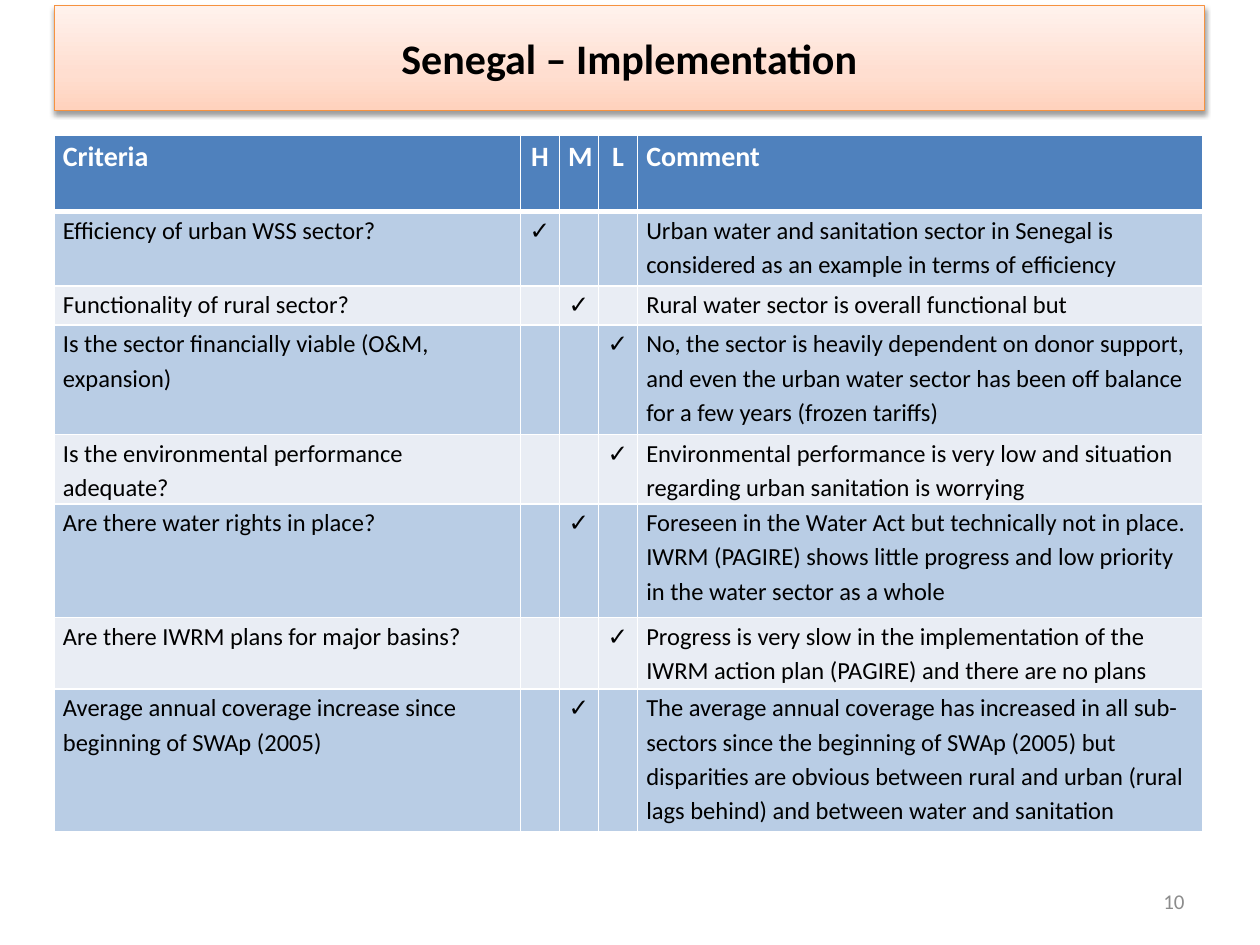
"""Build the Senegal implementation slide: a title bar and a rated criteria table."""
import copy

import pptx
import pptx.dml.color
import pptx.enum.text
import pptx.oxml
import pptx.util

Inches, Pt = pptx.util.Inches, pptx.util.Pt
ALIGN = pptx.enum.text.PP_ALIGN
MIDDLE = pptx.enum.text.MSO_ANCHOR.MIDDLE
NAMESPACE = 'xmlns:a="http://schemas.openxmlformats.org/drawingml/2006/main"'

TITLE = "Senegal – Implementation"
PAGE_NUMBER = "10"
RATINGS = ["H", "M", "L"]
HEADER = ["Criteria", *RATINGS, "Comment"]
CRITERIA = [
    ("Efficiency of urban WSS sector?", "H", 0.59,
     "Urban water and sanitation sector in Senegal is considered as an example in terms of efficiency"),
    ("Functionality of rural sector?", "M", 0.31,
     "Rural water sector is overall functional but"),
    ("Is the sector financially viable (O&M, expansion)", "L", 0.87,
     "No, the sector is heavily dependent on donor support, and even the urban water sector "
     "has been off balance for a few years (frozen tariffs)"),
    ("Is the environmental performance adequate?", "L", 0.55,
     "Environmental performance is very low and situation regarding urban sanitation is worrying"),
    ("Are there water rights in place?", "M", 0.9,
     "Foreseen in the Water Act but technically not in place. IWRM (PAGIRE) shows little "
     "progress and low priority in the water sector as a whole"),
    ("Are there IWRM plans for major basins?", "L", 0.57,
     "Progress is very slow in the implementation of the IWRM action plan (PAGIRE) and there are no plans"),
    ("Average annual coverage increase since beginning of SWAp (2005)", "M", 1.13,
     "The average annual coverage has increased in all sub-sectors since the beginning of SWAp (2005) "
     "but disparities are obvious between rural and urban (rural lags behind) "
     "and between water and sanitation"),
]
LEFT, WIDTH = 0.43, 9.13
COLUMN_WIDTHS = [3.7, 0.31, 0.31, 0.31, 4.49]
HEADER_HEIGHT = 0.61
HEADER_FILL, BAND_FILLS = "4F81BD", ["B9CDE5", "E9EDF4"]
TITLE_STOPS = [(0, "FFD2BD"), (0.35, "FFDED0"), (1, "FFF2ED")]


def colour(value):
    return pptx.dml.color.RGBColor.from_string(value)


def write(frame, text, size, value, bold=False, align=ALIGN.LEFT, spacing=None):
    para = frame.paragraphs[0]
    para.alignment, para.line_spacing = align, spacing
    para.font.size = Pt(size)
    if text:
        span = para.add_run()
        span.text = text
        span.font.name, span.font.size, span.font.bold = "Calibri", Pt(size), bold
        span.font.color.rgb = colour(value)
    else:
        para._p.get_or_add_endParaRPr().set("sz", str(size * 100))


def add_borders(cell, bottom):
    for side, width in zip("LRTB", (1, 1, 1, bottom)):
        cell._tc.get_or_add_tcPr().append(pptx.oxml.parse_xml(
            f'<a:ln{side} {NAMESPACE} w="{Pt(width)}"><a:solidFill>'
            f'<a:srgbClr val="FFFFFF"/></a:solidFill></a:ln{side}>'))


def add_title(page):
    box = page.shapes.title
    box.left, box.top, box.width, box.height = map(Inches, (LEFT, 0.21, WIDTH, 0.5))
    box.fill.gradient()
    box.fill.gradient_angle = 90
    stop_list = box._element.spPr.find(".//{*}gsLst")
    stop_list.insert(1, copy.deepcopy(stop_list[0]))
    for stop, (position, value) in zip(box.fill.gradient_stops, TITLE_STOPS):
        stop.position, stop.color.rgb = position, colour(value)
    box.line.color.rgb, box.line.width = colour("F69240"), Pt(0.75)
    box._element.spPr.append(pptx.oxml.parse_xml(
        f'<a:effectLst {NAMESPACE}><a:outerShdw blurRad="{Pt(3.1)}" dist="{Pt(1.6)}" '
        'dir="5400000" rotWithShape="0"><a:srgbClr val="000000"><a:alpha val="38000"/>'
        '</a:srgbClr></a:outerShdw></a:effectLst>'))
    frame = box.text_frame
    frame.auto_size = pptx.enum.text.MSO_AUTO_SIZE.SHAPE_TO_FIT_TEXT
    frame.vertical_anchor = MIDDLE
    write(frame, TITLE, 24, "000000", True, ALIGN.CENTER)


def add_criteria_table(page):
    rows = [HEADER]
    for question, rating, _, comment in CRITERIA:
        rows.append([question, *("✓" if name == rating else "" for name in RATINGS), comment])
    heights = [HEADER_HEIGHT, *(height for _, _, height, _ in CRITERIA)]
    table = page.shapes.add_table(
        len(rows), len(HEADER), Inches(LEFT), Inches(1.07), Inches(WIDTH), Inches(sum(heights))).table
    for column, width in zip(table.columns, COLUMN_WIDTHS):
        column.width = Inches(width)
    for index, (texts, height) in enumerate(zip(rows, heights)):
        table.rows[index].height = Inches(height)
        is_header = index == 0
        fill = HEADER_FILL if is_header else BAND_FILLS[(index - 1) % 2]
        for position, text in enumerate(texts):
            cell = table.cell(index, position)
            cell.margin_left = cell.margin_right = Inches(0.07)
            cell.margin_top = cell.margin_bottom = 0
            add_borders(cell, 3 if is_header else 1)
            cell.fill.solid()
            cell.fill.fore_color.rgb = colour(fill)
            write(cell.text_frame, text, 16 if is_header else 14,
                  "FFFFFF" if is_header else "000000", is_header,
                  ALIGN.CENTER if 0 < position <= len(RATINGS) else ALIGN.LEFT, 1.15)


def add_page_number(page):
    box = page.shapes.add_textbox(*map(Inches, (7.17, 6.95, 2.33, 0.4)))
    box.text_frame.word_wrap = True
    box.text_frame.vertical_anchor = MIDDLE
    write(box.text_frame, PAGE_NUMBER, 12, "8C8C8C", align=ALIGN.RIGHT)


def main():
    deck = pptx.Presentation()
    deck.slide_width, deck.slide_height = Inches(10), Inches(7.5)
    page = deck.slides.add_slide(deck.slide_layouts[5])
    add_criteria_table(page)
    add_title(page)
    add_page_number(page)
    deck.save("out.pptx")


if __name__ == "__main__":
    main()
